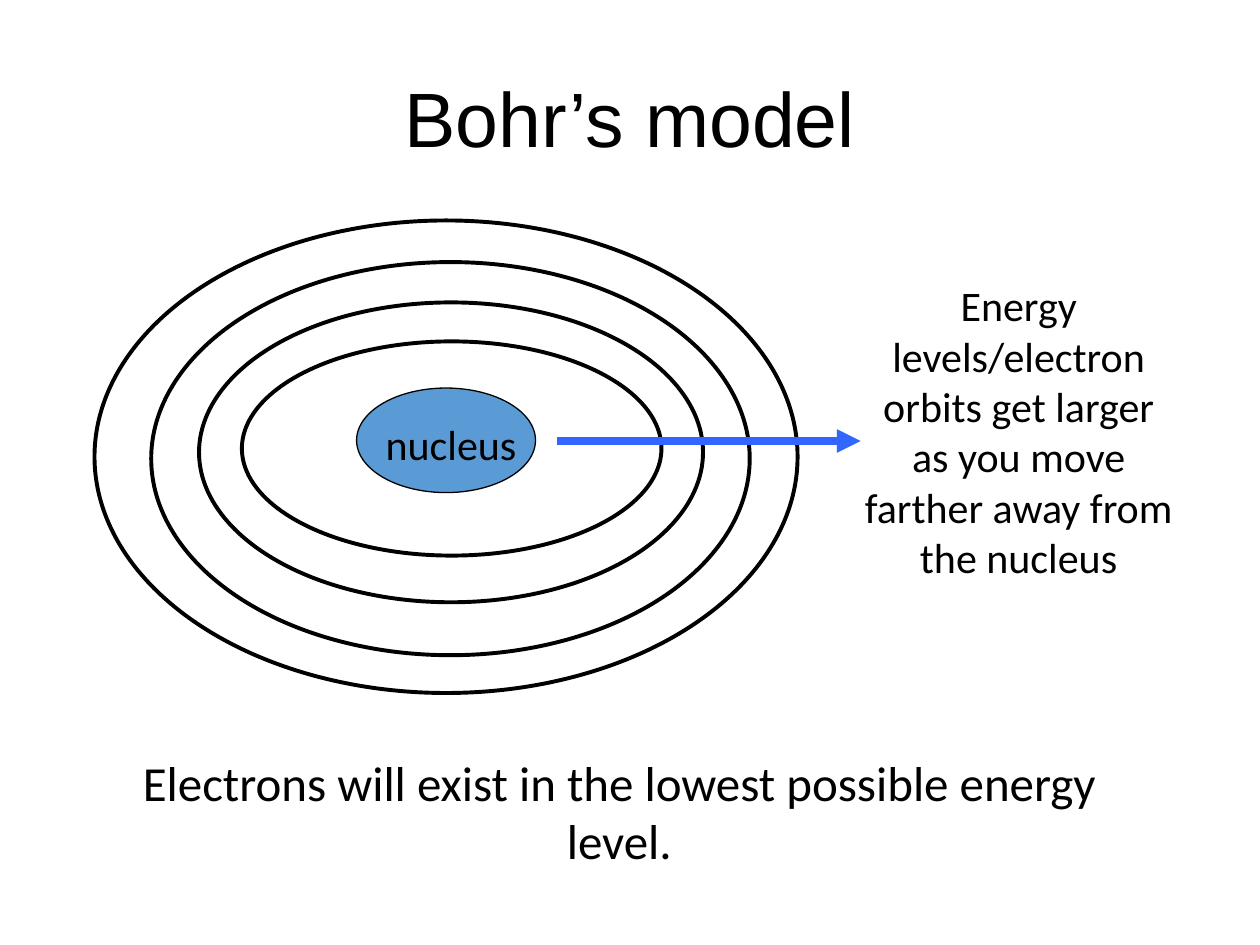
from dataclasses import dataclass

from lxml.etree import SubElement
from pptx import Presentation
from pptx.dml.color import RGBColor
from pptx.enum.shapes import MSO_CONNECTOR as Connector, MSO_SHAPE as Shape
from pptx.enum.text import MSO_ANCHOR as Anchor, PP_ALIGN as Align
from pptx.oxml.ns import qn
from pptx.util import Inches, Pt


@dataclass(frozen=True)
class Theme:
    """Colours, fonts, type sizes and line widths of the slide."""
    ink: RGBColor = RGBColor.from_string("000000")
    nucleus: RGBColor = RGBColor.from_string("5B9BD5")
    arrow: RGBColor = RGBColor.from_string("3366FF")
    title_font: str = "Arial"
    body_font: str = "Calibri"
    title_size: int = 44
    label_size: int = 24
    statement_size: int = 28
    nucleus_line: float = 0.75
    orbit_line: float = 2.25
    arrow_line: float = 4.5


THEME = Theme()
NUCLEUS = (2.83, 3.08, 1.42, 0.83)
ORBITS = (
    (1.92, 2.71, 3.33, 1.7),
    (1.58, 2.4, 4, 2.38),
    (1.2, 2.08, 4.75, 3.12),
    (0.75, 1.75, 5.58, 3.75),
)


def add_ellipse(page, bounds, line_width, fill=None):
    """Draw an outlined ellipse, hollow unless a fill is given."""
    ellipse = page.shapes.add_shape(Shape.OVAL, *map(Inches, bounds))
    ellipse.shadow.inherit = False
    if fill is None:
        ellipse.fill.background()
    else:
        ellipse.fill.solid()
        ellipse.fill.fore_color.rgb = fill
    ellipse.line.color.rgb = THEME.ink
    ellipse.line.width = Pt(line_width)


def add_text(page, text, bounds, *, size=THEME.label_size,
             font=THEME.body_font, anchor=Anchor.TOP):
    """Place one centred paragraph in a wrapping text box."""
    box = page.shapes.add_textbox(*map(Inches, bounds))
    frame = box.text_frame
    frame.word_wrap = True
    frame.vertical_anchor = anchor
    para = frame.paragraphs[0]
    para.alignment = Align.CENTER
    span = para.add_run()
    span.text = text
    span.font.name = font
    span.font.size = Pt(size)
    span.font.color.rgb = THEME.ink


def add_arrow(page, start, end):
    """Draw a straight arrow with a triangular head at its end."""
    arrow = page.shapes.add_connector(
        Connector.STRAIGHT, *map(Inches, (*start, *end)))
    arrow.line.color.rgb = THEME.arrow
    arrow.line.width = Pt(THEME.arrow_line)
    SubElement(arrow.line._get_or_add_ln(), qn("a:tailEnd"), type="triangle")
    SubElement(arrow._element.spPr, qn("a:effectLst"))


def main():
    """Build the slide on Bohr's model and save it."""
    deck = Presentation()
    deck.slide_width, deck.slide_height = Inches(10), Inches(7.5)
    page = deck.slides.add_slide(deck.slide_layouts[6])

    add_ellipse(page, NUCLEUS, THEME.nucleus_line, fill=THEME.nucleus)
    for orbit in ORBITS:
        add_ellipse(page, orbit, THEME.orbit_line)
    add_text(page, "nucleus", (2.83, 3.27, 1.5, 0.5))
    add_text(page, "Energy levels/electron orbits get larger as you move "
             "farther away from the nucleus", (6.75, 2.17, 2.67, 2.52))
    add_arrow(page, (4.42, 3.5), (6.83, 3.5))
    add_text(page, "Electrons will exist in the lowest possible energy level.",
             (0.83, 5.92, 8.17, 1.03), size=THEME.statement_size)
    add_text(page, "Bohr’s model", (0.5, 0.3, 9, 1.25), size=THEME.title_size,
             font=THEME.title_font, anchor=Anchor.MIDDLE)

    deck.save("out.pptx")


if __name__ == "__main__":
    main()
